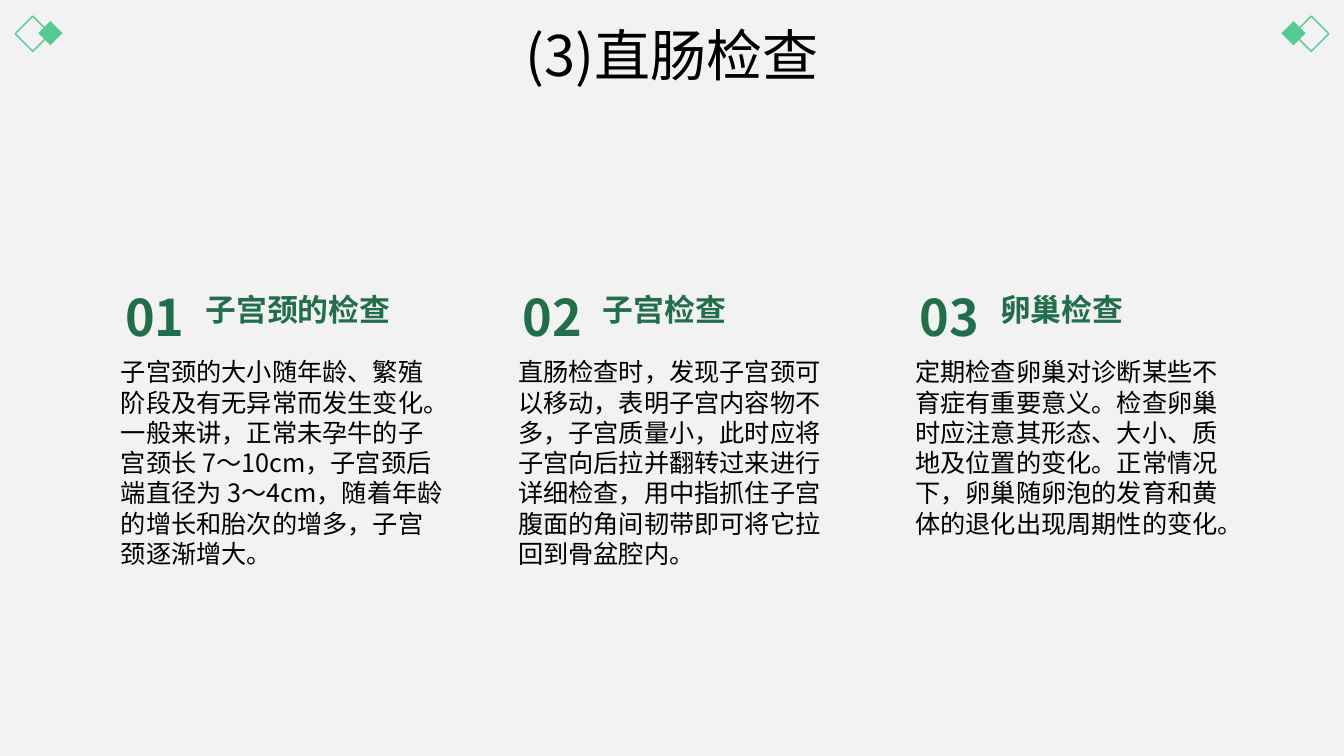
from dataclasses import dataclass
from typing import Any

from lxml.etree import SubElement
from pptx import Presentation
from pptx.dml.color import RGBColor
from pptx.enum.shapes import MSO_SHAPE
from pptx.enum.text import MSO_ANCHOR, PP_ALIGN
from pptx.oxml.ns import qn
from pptx.util import Inches, Pt

GRID_COLUMNS, GRID_ROWS = 133.3, 75
CELL = Inches(0.1)
COLUMN_PITCH = 39.4
FONT = "Noto Sans CJK SC"
BLACK, GREEN, MINT, PALE = "000000", "226E4B", "56CA95", "F2F2F2"


@dataclass(frozen=True)
class Area:
    """A rectangle measured in grid columns and rows."""

    column: float
    row: float
    columns: float
    rows: float

    def shifted(self, columns: float) -> "Area":
        """Return the same rectangle moved sideways."""
        return Area(self.column + columns, self.row, self.columns, self.rows)

    def mirrored(self) -> "Area":
        """Return the rectangle reflected about the middle of the slide."""
        left = GRID_COLUMNS - self.column - self.columns
        return Area(left, self.row, self.columns, self.rows)

    def lengths(self) -> tuple[int, ...]:
        """Return left, top, width and height in slide units."""
        cells = (self.column, self.row, self.columns, self.rows)
        return tuple(round(cell * CELL) for cell in cells)


@dataclass(frozen=True)
class TextStyle:
    """The look of one kind of text."""

    size: int
    color: str
    frame: dict[str, Any]
    para: dict[str, Any]
    bold: bool = False


@dataclass(frozen=True)
class Topic:
    """One numbered column of the slide."""

    number: str
    heading: str
    body: str


SOLID_DIAMOND = Area(3.8, 2.1, 2.4, 2.4)
OPEN_DIAMOND = Area(1.5, 1.6, 3.5, 3.5)
TITLE_AREA = Area(28.6, 1.3, 76.1, 8.9)
NUMBER_AREA = Area(10.9, 27, 8.4, 7.9)
BODY_AREA = Area(11, 34.9, 34.2, 25)
HEADING_AREA = Area(19.4, 25.1, 24.2, 7.9)

TITLE = TextStyle(40, BLACK, {"vertical_anchor": MSO_ANCHOR.MIDDLE},
                  {"alignment": PP_ALIGN.CENTER, "line_spacing": 0.9})
NUMBER = TextStyle(36, GREEN, {"vertical_anchor": MSO_ANCHOR.BOTTOM},
                   {"alignment": PP_ALIGN.RIGHT}, True)
HEADING = TextStyle(22, GREEN, {"vertical_anchor": MSO_ANCHOR.BOTTOM}, {}, True)
BODY = TextStyle(18, BLACK, {"vertical_anchor": MSO_ANCHOR.TOP},
                 {"line_spacing": Pt(21.6)})

TOPICS = [
    Topic("01", "子宫颈的检查",
          "子宫颈的大小随年龄、繁殖阶段及有无异常而发生变化。一般来讲，正常未孕牛的"
          "子宫颈长 7～10cm，子宫颈后端直径为 3～4cm，随着年龄的增长和胎次的增多，"
          "子宫颈逐渐增大。"),
    Topic("02", "子宫检查",
          "直肠检查时，发现子宫颈可以移动，表明子宫内容物不多，子宫质量小，此时应将"
          "子宫向后拉并翻转过来进行详细检查，用中指抓住子宫腹面的角间韧带即可将它拉"
          "回到骨盆腔内。"),
    Topic("03", "卵巢检查",
          "定期检查卵巢对诊断某些不育症有重要意义。检查卵巢时应注意其形态、大小、质"
          "地及位置的变化。正常情况下，卵巢随卵泡的发育和黄体的退化出现周期性的变化。"),
]


def color(value: str) -> RGBColor:
    """Turn a hex string into a colour."""
    return RGBColor.from_string(value)


def apply(target: Any, values: dict[str, Any]) -> None:
    """Set every named attribute on the target."""
    for name, value in values.items():
        setattr(target, name, value)


def add_text(page: Any, area: Area, text: str, style: TextStyle) -> None:
    """Write one styled text box."""
    frame = page.shapes.add_textbox(*area.lengths()).text_frame
    apply(frame, {"word_wrap": True, **style.frame})
    para = frame.paragraphs[0]
    apply(para, style.para)
    span = para.add_run()
    span.text = text
    apply(span.font, {"size": Pt(style.size), "bold": style.bold, "name": FONT})
    span.font.color.rgb = color(style.color)
    SubElement(span.font._element, qn("a:ea"), typeface=FONT)


def add_diamond(group: Any, area: Area, solid: bool) -> None:
    """Draw a filled or an outlined diamond."""
    diamond = group.shapes.add_shape(MSO_SHAPE.DIAMOND, *area.lengths())
    diamond.shadow.inherit = False
    if solid:
        diamond.fill.solid()
        diamond.fill.fore_color.rgb = color(MINT)
        diamond.line.fill.background()
    else:
        diamond.fill.background()
        diamond.line.color.rgb = color(MINT)
        diamond.line.width = Pt(1)


def add_corner(page: Any, on_right: bool) -> None:
    """Group the two diamonds of one top corner."""
    group = page.shapes.add_group_shape()
    for area, solid in ((SOLID_DIAMOND, True), (OPEN_DIAMOND, False)):
        add_diamond(group, area.mirrored() if on_right else area, solid)


def add_topic(page: Any, index: int, topic: Topic) -> None:
    """Write the number, body and heading of one column."""
    shift = index * COLUMN_PITCH
    add_text(page, NUMBER_AREA.shifted(shift), topic.number, NUMBER)
    add_text(page, BODY_AREA.shifted(shift), topic.body, BODY)
    add_text(page, HEADING_AREA.shifted(shift), topic.heading, HEADING)


def main() -> None:
    """Build and save the slide."""
    deck = Presentation()
    apply(deck, {"slide_width": round(GRID_COLUMNS * CELL),
                 "slide_height": GRID_ROWS * CELL})
    page = deck.slides.add_slide(deck.slide_layouts[6])
    page.background.fill.solid()
    page.background.fill.fore_color.rgb = color(PALE)
    for on_right in (True, False):
        add_corner(page, on_right)
    add_text(page, TITLE_AREA, "(3)直肠检查", TITLE)
    for index, topic in enumerate(TOPICS):
        add_topic(page, index, topic)
    deck.save("out.pptx")


if __name__ == "__main__":
    main()
